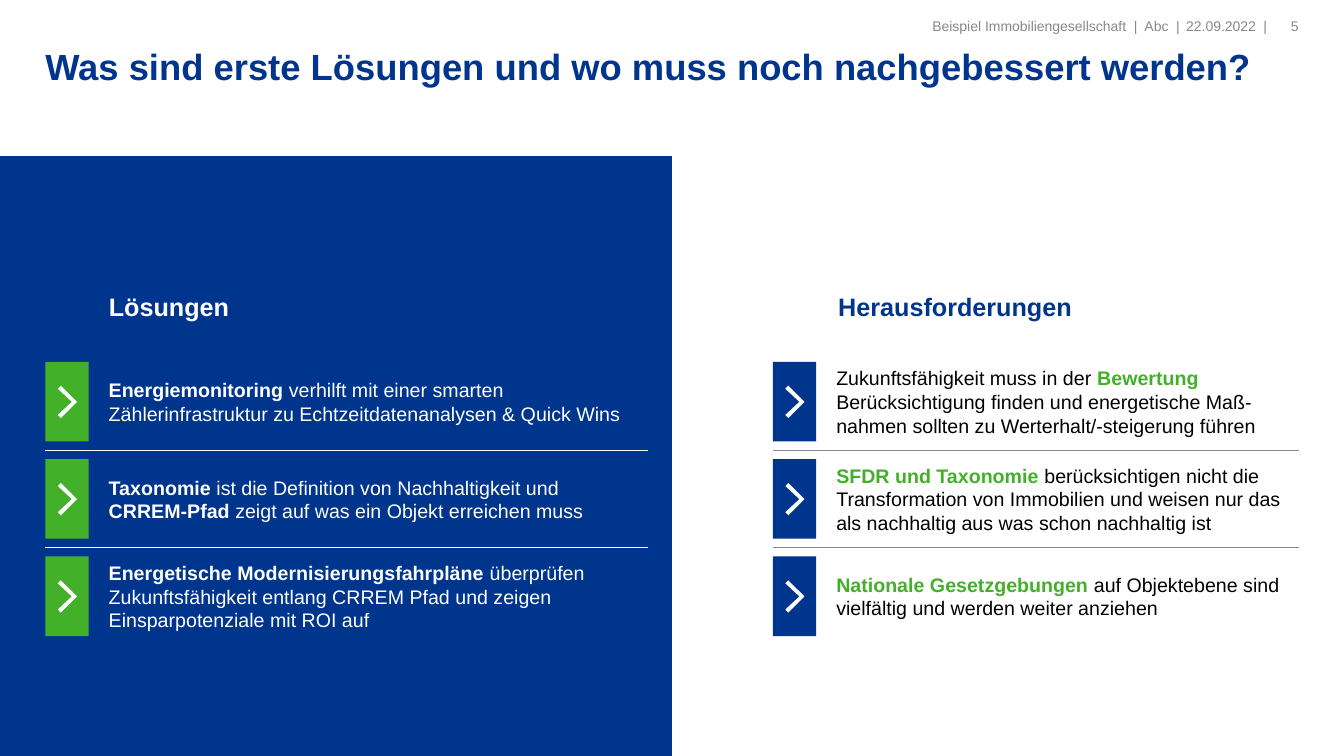
"""Builds a slide that sets solutions against challenges in two columns."""
from lxml import etree
from pptx import Presentation, util as u
from pptx.dml.color import RGBColor
from pptx.enum import shapes, text
from pptx.oxml.ns import qn

WIDTH, HEIGHT = u.Inches(13.34), u.Inches(7.5)
COLORS = {"blue": "00358E", "green": "43B02A", "white": "FFFFFF",
          "black": "000000", "gray": "888888"}
LEFT, FIRST_ROW, ROW_STEP, ROW_HEIGHT, RULE_OFFSET = 3.37, 47.87, 12.87, 10.53, 11.73
HEADING_TOP, HEADING_HEIGHT = 38.53, 6.67
ROW_INSETS = {"margin_left": 0.63, "margin_top": 0.08,
              "margin_right": 0.08, "margin_bottom": 0.08}
NO_INSETS = dict.fromkeys(ROW_INSETS, 0)
CHEVRON = [(0, 0.03), (0.03, 0), (0.19, 0.16), (0.03, 0.32), (0, 0.29), (0.14, 0.16)]

SOLUTIONS = {
    "left": LEFT, "width": 44.83, "heading": "Lösungen", "heading_left": 8.1,
    "heading_color": "white", "marker": "green", "rule": "white",
    "strong": "white", "plain": "white",
    "rows": [
        [("Energiemonitoring", True),
         (" verhilft mit einer smarten Zählerinfrastruktur zu "
          "Echtzeitdatenanalysen & Quick Wins", False)],
        [("Taxonomie", True), (" ist die Definition von Nachhaltigkeit und ", False),
         ("CRREM-Pfad", True), (" zeigt auf was ein Objekt erreichen muss", False)],
        [("Energetische Modernisierungsfahrpläne", True),
         (" überprüfen Zukunftsfähigkeit entlang CRREM Pfad und zeigen "
          "Einsparpotenziale mit ROI auf", False)],
    ],
}
CHALLENGES = {
    "left": 57.5, "width": 39.13, "heading": "Herausforderungen", "heading_left": 62.37,
    "heading_color": "blue", "marker": "blue", "rule": "gray",
    "strong": "green", "plain": "black",
    "rows": [
        [("Zukunftsfähigkeit muss in der ", False), ("Bewertung", True),
         (" Berücksichtigung finden und energetische Maß-nahmen sollten zu "
          "Werterhalt/-steigerung führen", False)],
        [("SFDR und Taxonomie", True),
         (" berücksichtigen nicht die Transformation von Immobilien und weisen nur das "
          "als nachhaltig aus was schon nachhaltig ist", False)],
        [("Nationale Gesetzgebungen", True),
         (" auf Objektebene sind vielfältig und werden weiter anziehen", False)],
    ],
}


def across(percent):
    """Turn a percentage of the slide width into a length."""
    return u.Emu(round(WIDTH * percent / 100))


def down(percent):
    """Turn a percentage of the slide height into a length."""
    return u.Emu(round(HEIGHT * percent / 100))


def area(left, top, width, height):
    """Turn four percentages into a position and a size."""
    return across(left), down(top), across(width), down(height)


def color(name):
    """Look up a named colour."""
    return RGBColor.from_string(COLORS[name])


def paint(shape, fill):
    """Give a shape a plain fill without line or shadow."""
    shape.shadow.inherit = False
    shape.fill.solid()
    shape.fill.fore_color.rgb = color(fill)
    shape.line.fill.background()


def add_text(slide, box, runs, size, insets=NO_INSETS, align=text.PP_ALIGN.LEFT,
             anchor=text.MSO_ANCHOR.TOP, wrap=True):
    """Add one paragraph made of (words, colour, bold) runs."""
    frame = slide.shapes.add_textbox(*area(*box)).text_frame
    settings = {name: u.Inches(inset) for name, inset in insets.items()}
    settings |= {"word_wrap": wrap, "vertical_anchor": anchor}
    for name, value in settings.items():
        setattr(frame, name, value)
    paragraph = frame.paragraphs[0]
    paragraph.alignment = align
    for words, tint, bold in runs:
        run = paragraph.add_run()
        run.text = words
        for name, value in {"name": "Arial", "size": u.Pt(size), "bold": bold}.items():
            setattr(run.font, name, value)
        run.font.color.rgb = color(tint)


def add_rectangle(slide, box, fill):
    """Add a plain rectangle."""
    paint(slide.shapes.add_shape(shapes.MSO_SHAPE.RECTANGLE, *area(*box)), fill)


def add_chevron(slide, left, top):
    """Draw a white chevron with its corner at the given place."""
    points = [(across(left) + u.Inches(x), down(top) + u.Inches(y)) for x, y in CHEVRON]
    builder = slide.shapes.build_freeform(*points[0])
    builder.add_line_segments(points[1:], close=True)
    paint(builder.convert_to_shape(), "white")


def add_rule(slide, left, top, width, tint):
    """Draw a thin horizontal rule."""
    rule = slide.shapes.add_connector(shapes.MSO_CONNECTOR.STRAIGHT, across(left),
                                      down(top), across(left + width), down(top))
    rule.line.color.rgb = color(tint)
    rule.line.width = u.Pt(0.75)
    etree.SubElement(rule._element.spPr, qn("a:effectLst"))


def add_column(slide, column):
    """Add a heading and its rows, with rules between the rows."""
    left, width, rows = column["left"], column["width"], column["rows"]
    add_text(slide, (column["heading_left"], HEADING_TOP, 36.28, HEADING_HEIGHT),
             [(column["heading"], column["heading_color"], True)], 18)
    for index, row in enumerate(rows):
        top = FIRST_ROW + index * ROW_STEP
        runs = [(words, column["strong" if bold else "plain"], bold) for words, bold in row]
        add_text(slide, (left, top, width, ROW_HEIGHT), runs, 14, ROW_INSETS,
                 anchor=text.MSO_ANCHOR.MIDDLE)
        add_rectangle(slide, (left, top, 3.22, ROW_HEIGHT), column["marker"])
        add_chevron(slide, left + 0.93, top + 3.15)
        if index < len(rows) - 1:
            add_rule(slide, left, top + RULE_OFFSET, width, column["rule"])


def add_header(slide):
    """Add the sender, date and page number at the top."""
    align = text.PP_ALIGN
    for left, width, words, side, wrap in [
        (51.72, 36.06, "Beispiel Immobiliengesellschaft  |  Abc  |", align.RIGHT, True),
        (87.78, 6.15, "22.09.2022", align.CENTER, False),
        (94, 0.3, "|", align.LEFT, False),
        (94.3, 2.32, "5", align.RIGHT, True),
    ]:
        add_text(slide, (left, 2.27, width, 2.67), [(words, "gray", False)], 10,
                 align=side, wrap=wrap)


def main():
    """Build and save the slide."""
    presentation = Presentation()
    presentation.slide_width, presentation.slide_height = WIDTH, HEIGHT
    slide = presentation.slides.add_slide(presentation.slide_layouts[6])
    add_rectangle(slide, (0, 20.67, 50, 79.33), "blue")
    title = "Was sind erste Lösungen und wo muss noch nachgebessert werden?"
    add_text(slide, (LEFT, 5.87, 93.25, 10.53), [(title, "blue", True)], 26)
    for column in (SOLUTIONS, CHALLENGES):
        add_column(slide, column)
    add_header(slide)
    presentation.save("out.pptx")


if __name__ == "__main__":
    main()
